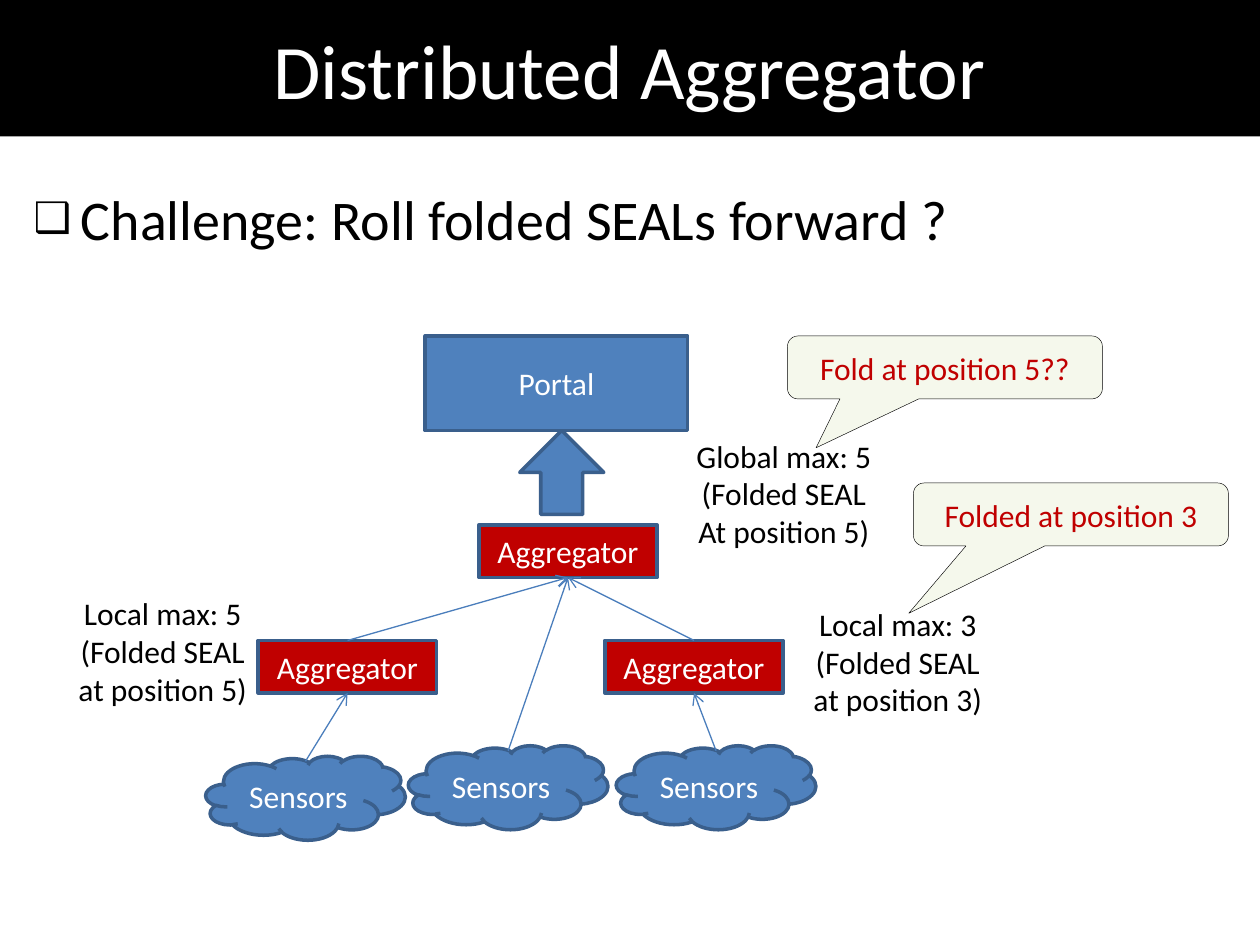
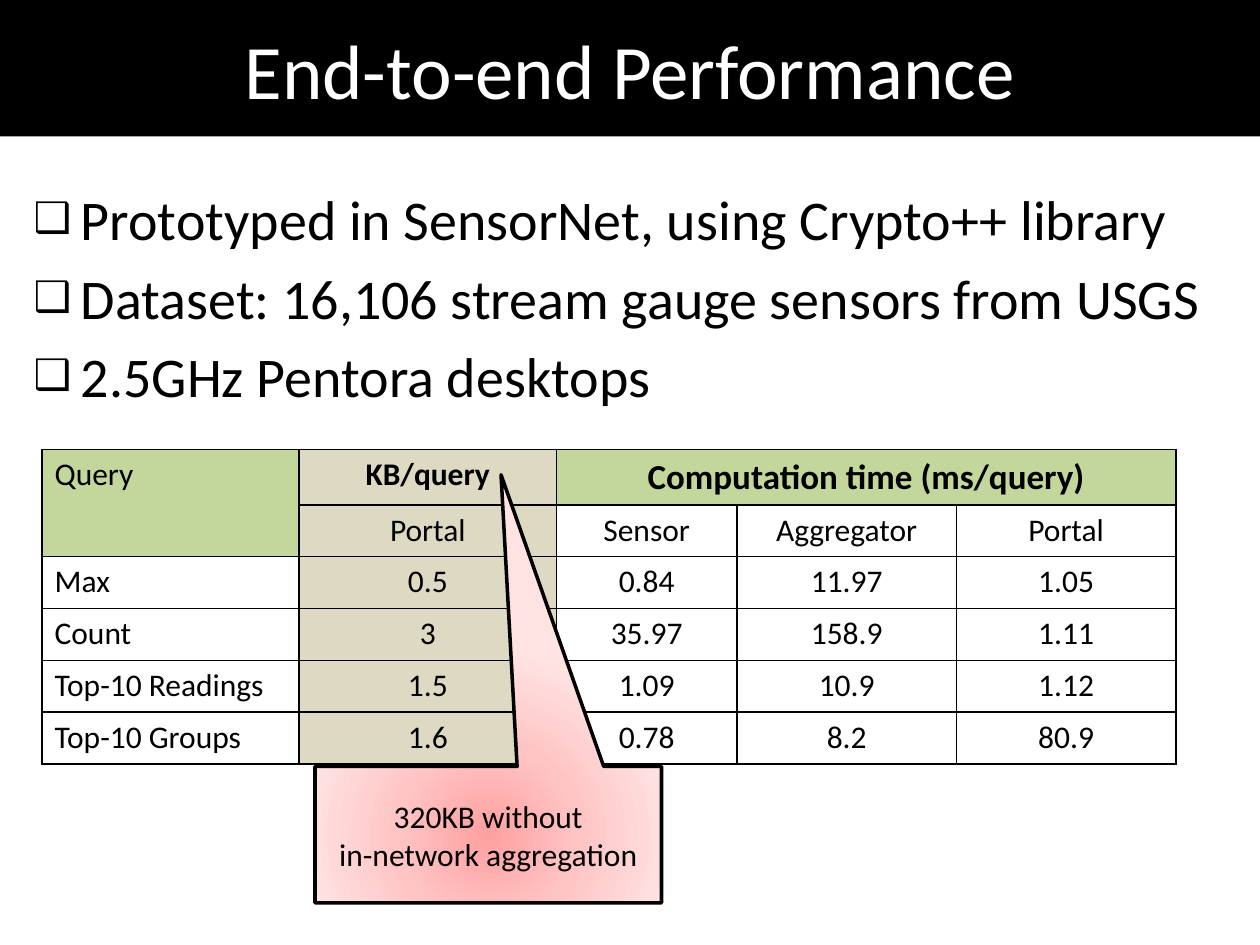
from dataclasses import dataclass
from lxml import etree
from pptx import Presentation, util as u
from pptx.dml.color import RGBColor
from pptx.enum import shapes, text
from pptx.oxml import parse_xml
from pptx.oxml.ns import nsdecls, qn


@dataclass(frozen=True)
class Theme:
    font: str = "Calibri"
    black: str = "000000"
    white: str = "FFFFFF"
    blue: str = "4F81BD"
    edge: str = "3A5F8C"
    link: str = "4B7EBC"
    red: str = "C00000"
    pale: str = "F5F8EC"
    green: str = "C3D69B"
    tan: str = "DDD9C3"
    glow: tuple = ((0, "FFA0A0"), (50, "FFC5C5"), (100, "FFE3E3"))
    title: int = 44
    list: int = 32
    head: int = 20
    body: int = 18


T = Theme()
KIND = shapes.MSO_SHAPE
MID = text.PP_ALIGN.CENTER

# All places are in grid units; the slide is 120 units wide and 90 high.
UNIT = u.Inches(10) / 120
TITLE = (0, 0, 120, 13)
LIST = (2, 17, 115, 65)

TREE = {
    "title": "Distributed Aggregator",
    "list": ["Challenge: Roll folded SEALs forward ?"],
    # name: (kind, words, fill, place)
    "nodes": {
        "portal": (KIND.RECTANGLE, "Portal", T.blue, (40.5, 32, 25, 9)),
        "arrow": (KIND.UP_ARROW, "", T.blue, (49.5, 41, 8, 8)),
        **{name: (KIND.CLOUD, "Sensors", T.blue, (x, y, 19, 8))
           for name, x, y in [("far", 19.6, 72), ("near", 38.9, 71), ("side", 58.7, 71)]},
        **{name: (KIND.RECTANGLE, "Aggregator", T.red, (x, y, 17, 5))
           for name, x, y in [("left", 24.6, 61), ("right", 57.6, 61), ("top", 45.6, 50)]},
    },
    "links": [("far", "left"), ("near", "top"), ("side", "right"),
              ("left", "top"), ("right", "top")],
    "notes": [
        (["Local max: 5", "(Folded SEAL", "at position 5)"], (6, 56, 19, 12.1)),
        (["Local max: 3", "(Folded SEAL", "at position 3)"], (76, 57, 19, 12.1)),
        (["Global max: 5", "(Folded SEAL", "At position 5)"], (65, 41, 19.3, 12.1)),
    ],
    "calls": [
        ("Folded at position 3", (87, 46, 30, 6), (-0.515, 1.569, 0.167)),
        ("Fold at position 5??", (75, 32, 30, 6), (-0.409, 1.276, 0.167)),
    ],
}

SPEED = {
    "title": "End-to-end Performance",
    "list": ["Prototyped in SensorNet, using Crypto++ library",
             "Dataset: 16,106 stream gauge sensors from USGS",
             "2.5GHz Pentora desktops"],
    "place": (4, 42.8, 108, 29.6),
    "cols": [24.5, 24.5, 17.2, 20.9, 20.9],
    "rows": [
        ["Query", "KB/query", "Computation time (ms/query)", "", ""],
        ["", "Portal", "Sensor", "Aggregator", "Portal"],
        ["Max", "0.5", "0.84", "11.97", "1.05"],
        ["Count", "3", "35.97", "158.9", "1.11"],
        ["Top-10 Readings", "1.5", "1.09", "10.9", "1.12"],
        ["Top-10 Groups", "1.6", "0.78", "8.2", "80.9"],
    ],
    "spans": [((0, 0), (1, 0)), ((0, 2), (0, 4))],
    "call": (["320KB without", "in-network aggregation"],
             (30, 73, 33, 13), (0.037, -2.637)),
}


def rgb(code):
    return RGBColor.from_string(code)


def grid(*units):
    return [round(n * UNIT) for n in units]


def move(shape, place):
    shape.left, shape.top, shape.width, shape.height = grid(*place)


def write(par, words, size=T.body, color=T.black, bold=False, align=MID):
    """Add one run, or several parted by line breaks when words is a list."""
    par.alignment = align
    for i, line in enumerate([words] if isinstance(words, str) else words):
        if i:
            par.add_line_break()
        run = par.add_run()
        run.text = line
        run.font.name, run.font.size, run.font.bold = T.font, u.Pt(size), bold
        run.font.color.rgb = rgb(color)


def paint(shape, color):
    shape.fill.solid()
    shape.fill.fore_color.rgb = rgb(color)


def bullet(par):
    props = par._p.get_or_add_pPr()
    indent = u.Inches(0.375)
    props.set("marL", str(indent))
    props.set("indent", str(-indent))
    for tag, key, val in [("buSzPct", "val", "75000"), ("buChar", "char", "❑")]:
        if tag == "buSzPct":
            tint = etree.SubElement(props, qn("a:buClr"))
            etree.SubElement(tint, qn("a:srgbClr")).set("val", T.black)
        etree.SubElement(props, qn("a:" + tag)).set(key, val)


def frame(deck, page):
    """Add a slide with the title band and the bulleted list."""
    slide = deck.slides.add_slide(deck.slide_layouts[1])
    band, body = slide.shapes.title, slide.placeholders[1]
    move(band, TITLE)
    paint(band, T.white if not page["title"] else T.black)
    write(band.text_frame.paragraphs[0], page["title"], T.title, T.white)
    move(body, LIST)
    for i, item in enumerate(page["list"]):
        frm = body.text_frame
        par = frm.add_paragraph() if i else frm.paragraphs[0]
        write(par, item, T.list, align=text.PP_ALIGN.LEFT)
        bullet(par)
    return slide


def block(slide, kind, words, place, fill=None, line=T.edge, width=2,
          color=T.white, adjust=()):
    shape = slide.shapes.add_shape(kind, *grid(*place))
    shape.shadow.inherit = False
    if fill:
        paint(shape, fill)
    shape.line.color.rgb = rgb(line)
    shape.line.width = u.Pt(width)
    for i, val in enumerate(adjust):
        shape.adjustments[i] = val
    if words:
        shape.text_frame.word_wrap = True
        shape.text_frame.vertical_anchor = text.MSO_ANCHOR.MIDDLE
        write(shape.text_frame.paragraphs[0], words, color=color)
    return shape


def link(slide, start, end):
    """Run an arrow from the top of start to the bottom of end."""
    inset = 0.5 if start.auto_shape_type == KIND.CLOUD else 0
    line = slide.shapes.add_connector(
        shapes.MSO_CONNECTOR.STRAIGHT,
        start.left + start.width // 2, start.top + round(inset * UNIT),
        end.left + end.width // 2, end.top + end.height)
    if not inset:
        line.begin_connect(start, 0)
    line.end_connect(end, 2)
    line.line.color.rgb = rgb(T.link)
    line.line.width = u.Pt(0.75)
    etree.SubElement(line.line._get_or_add_ln(), qn("a:tailEnd")).set("type", "arrow")
    etree.SubElement(line._element.spPr, qn("a:effectLst"))


def note(slide, lines, place):
    frm = slide.shapes.add_textbox(*grid(*place)).text_frame
    frm.word_wrap = False
    frm.auto_size = text.MSO_AUTO_SIZE.SHAPE_TO_FIT_TEXT
    for i, line in enumerate(lines):
        write(frm.add_paragraph() if i else frm.paragraphs[0], line)


def glow(shape):
    """Fill a shape with a round gradient from its centre."""
    stops = "".join(f'<a:gs pos="{pos * 1000}"><a:srgbClr val="{code}"/></a:gs>'
                    for pos, code in T.glow)
    fill = parse_xml(
        f'<a:gradFill {nsdecls("a")} rotWithShape="1"><a:gsLst>{stops}</a:gsLst>'
        '<a:path path="circle"><a:fillToRect l="50000" t="50000" r="50000" b="50000"/>'
        '</a:path></a:gradFill>')
    shape._element.spPr.find(qn("a:prstGeom")).addnext(fill)


def rule(cell):
    """Draw a thin border round a cell."""
    props = cell._tc.get_or_add_tcPr()
    for i, side in enumerate(("lnL", "lnR", "lnT", "lnB")):
        props.insert(i, parse_xml(
            f'<a:{side} {nsdecls("a")} w="12700"><a:solidFill>'
            f'<a:srgbClr val="{T.black}"/></a:solidFill></a:{side}>'))


def shade(row, col):
    if col == 1:
        return T.tan
    return T.green if row == 0 or (row, col) == (1, 0) else T.white


def chart(slide, page):
    rows, cols = page["rows"], page["cols"]
    table = slide.shapes.add_table(len(rows), len(cols), *grid(*page["place"])).table
    for col, width in zip(table.columns, grid(*cols)):
        col.width = width
    for r, row in enumerate(rows):
        for c, words in enumerate(row):
            cell = table.cell(r, c)
            paint(cell, shade(r, c))
            rule(cell)
            if words:
                write(cell.text_frame.paragraphs[0], words,
                      T.head if r == 0 and c > 1 else T.body,
                      bold=r == 0 and c > 0,
                      align=MID if c else text.PP_ALIGN.LEFT)
    for first, last in page["spans"]:
        table.cell(*first).merge(table.cell(*last))


def tree(deck):
    slide = frame(deck, TREE)
    nodes = {name: block(slide, kind, words, place, fill)
             for name, (kind, words, fill, place) in TREE["nodes"].items()}
    for start, end in TREE["links"]:
        link(slide, nodes[start], nodes[end])
    for lines, place in TREE["notes"]:
        note(slide, lines, place)
    for words, place, adjust in TREE["calls"]:
        block(slide, KIND.ROUNDED_RECTANGULAR_CALLOUT, words, place, T.pale,
              T.black, 0.25, T.red, adjust)


def speed(deck):
    slide = frame(deck, SPEED)
    chart(slide, SPEED)
    words, place, adjust = SPEED["call"]
    glow(block(slide, KIND.RECTANGULAR_CALLOUT, words, place, line=T.black,
               color=T.black, adjust=adjust))


def main():
    deck = Presentation()
    deck.slide_width, deck.slide_height = grid(120, 90)
    tree(deck)
    speed(deck)
    deck.save("out.pptx")


if __name__ == "__main__":
    main()
